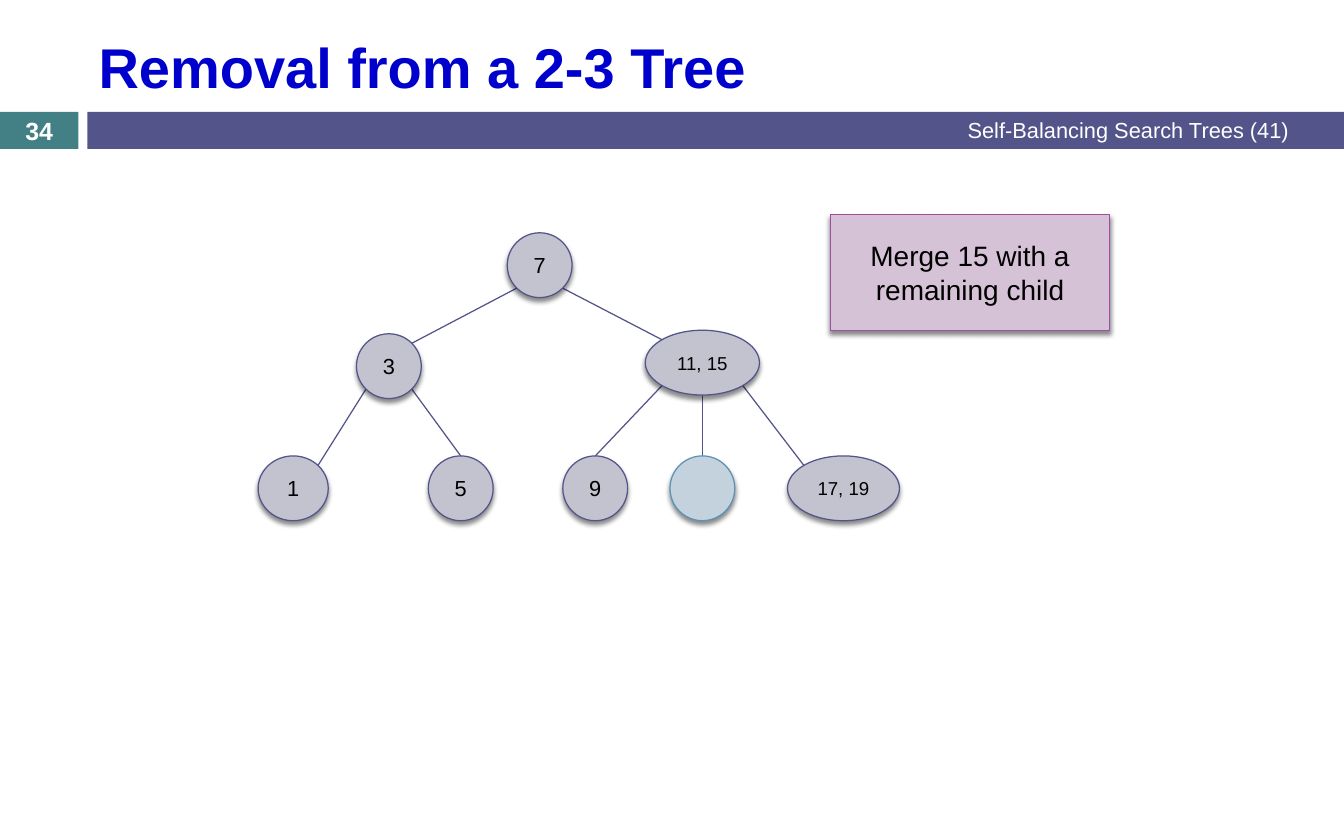
from dataclasses import dataclass
from math import sqrt

from lxml import etree
from pptx import Presentation
from pptx.dml.color import RGBColor
from pptx.enum.shapes import MSO_CONNECTOR, MSO_SHAPE
from pptx.enum.text import MSO_ANCHOR, PP_ALIGN
from pptx.oxml.ns import qn
from pptx.util import Cm, Pt

OVAL, RECT = MSO_SHAPE.OVAL, MSO_SHAPE.RECTANGLE
STRAIGHT = MSO_CONNECTOR.STRAIGHT
MIDDLE = MSO_ANCHOR.MIDDLE
LEFT, CENTER, RIGHT = PP_ALIGN.LEFT, PP_ALIGN.CENTER, PP_ALIGN.RIGHT


@dataclass(frozen=True)
class Theme:
    font: str = "Arial"
    title: str = "0000CC"
    teal: str = "438086"
    indigo: str = "53548A"
    node: str = "C3C3CF"
    hole: str = "C4D2DE"
    rim: str = "5C92B5"
    note: str = "D6C2D7"
    edge: str = "A04DA3"
    black: str = "000000"
    white: str = "FFFFFF"
    line: float = 0.79
    head: int = 36
    body: int = 18
    page: int = 16
    label: int = 14
    small: int = 12


THEME = Theme()


@dataclass(frozen=True)
class Box:
    x: float
    y: float
    w: float
    h: float

    def lengths(self) -> tuple:
        return Cm(self.x), Cm(self.y), Cm(self.w), Cm(self.h)


@dataclass(frozen=True)
class Node:
    text: str
    mid: float
    top: float
    width: float = 1.47
    size: int = THEME.label
    fill: str = THEME.node
    rim: str = THEME.indigo
    height: float = 1.47

    def box(self) -> Box:
        return Box(self.mid - self.width / 2, self.top, self.width, self.height)

    def port(self, side: int, down: int) -> tuple:
        scale = 1 / sqrt(2) if side else 1
        return (Cm(self.mid + side * scale * self.width / 2),
                Cm(self.top + self.height * (1 + down * scale) / 2))


@dataclass(frozen=True)
class Link:
    start: str
    end: str
    out: int
    into: int


LEAF = 10.34
NODES = {
    "root": Node("7", 12.24, 5.28),
    "three": Node("3", 8.82, 7.57),
    "pair": Node("11, 15", 15.93, 7.49, 2.59, THEME.small),
    "one": Node("1", 6.65, LEAF, 1.59),
    "five": Node("5", 10.45, LEAF),
    "nine": Node("9", 13.5, LEAF),
    "hole": Node("", 15.93, LEAF, fill=THEME.hole, rim=THEME.rim),
    "last": Node("17, 19", 19.13, LEAF, 2.54, THEME.small),
}
LINKS = [
    Link("root", "three", -1, 1),
    Link("root", "pair", 1, -1),
    Link("three", "one", -1, 1),
    Link("three", "five", 1, 0),
    Link("pair", "nine", -1, 0),
    Link("pair", "hole", 0, 0),
    Link("pair", "last", 1, -1),
]


def write(shape, text: str, size: int, color: str, align, bold: bool = False) -> None:
    frame = shape.text_frame
    frame.text = text
    frame.word_wrap = True
    frame.vertical_anchor = MIDDLE
    for para in frame.paragraphs:
        para.alignment = align
        for run in para.runs:
            run.font.name = THEME.font
            run.font.size = Pt(size)
            run.font.bold = bold
            run.font.color.rgb = RGBColor.from_string(color)


def draw_shape(slide, kind, box: Box, fill: str, line: str = ""):
    shape = slide.shapes.add_shape(kind, *box.lengths())
    shape.fill.solid()
    shape.fill.fore_color.rgb = RGBColor.from_string(fill)
    shape.shadow.inherit = False
    if line:
        shape.line.color.rgb = RGBColor.from_string(line)
        shape.line.width = Pt(THEME.line)
        add_shade(shape)
    else:
        shape.line.fill.background()
    return shape


def add_shade(shape) -> None:
    effects = shape.element.spPr.find(qn("a:effectLst"))
    shade = etree.SubElement(effects, qn("a:outerShdw"), blurRad=str(Pt(3)),
                             dist=str(Pt(2.4)), dir="5400000", rotWithShape="0")
    color = etree.SubElement(shade, qn("a:srgbClr"), val=THEME.black)
    etree.SubElement(color, qn("a:alpha"), val="45000")


def draw_link(slide, link: Link) -> None:
    start = NODES[link.start].port(link.out, 1)
    end = NODES[link.end].port(link.into, -1)
    line = slide.shapes.add_connector(STRAIGHT, *start, *end)
    line.line.color.rgb = RGBColor.from_string(THEME.indigo)
    line.line.width = Pt(THEME.line)
    etree.SubElement(line.element.spPr, qn("a:effectLst"))


def draw_node(slide, node: Node) -> None:
    shape = draw_shape(slide, OVAL, node.box(), node.fill, node.rim)
    if node.text:
        frame = shape.text_frame
        frame.margin_left = frame.margin_right = Cm(0)
        write(shape, node.text, node.size, THEME.black, CENTER)


def draw_frame(slide) -> None:
    badge = Box(0, 2.54, 1.78, 0.84)
    draw_shape(slide, RECT, badge, THEME.teal)
    draw_shape(slide, RECT, Box(1.98, 2.54, 28.5, 0.84), THEME.indigo)
    topic = slide.shapes.add_textbox(*Box(11.43, 2.51, 18.06, 0.89).lengths())
    write(topic, "Self-Balancing Search Trees (41)", THEME.label, THEME.white, RIGHT)
    page = slide.shapes.add_textbox(*badge.lengths())
    write(page, "34", THEME.page, THEME.white, CENTER, True)
    title = slide.shapes.title
    title.left, title.top, title.width, title.height = Box(1.98, 0.48, 27.18, 2.03).lengths()
    write(title, "Removal from a 2-3 Tree", THEME.head, THEME.title, LEFT, True)


def main() -> None:
    deck = Presentation()
    deck.slide_width, deck.slide_height = Cm(30.48), Cm(19.05)
    slide = deck.slides.add_slide(deck.slide_layouts[5])
    draw_frame(slide)
    for link in LINKS:
        draw_link(slide, link)
    for node in NODES.values():
        draw_node(slide, node)
    note = draw_shape(slide, RECT, Box(18.83, 4.86, 6.34, 2.64), THEME.note, THEME.edge)
    write(note, "Merge 15 with a remaining child", THEME.body, THEME.black, CENTER)
    deck.save("out.pptx")


if __name__ == "__main__":
    main()
